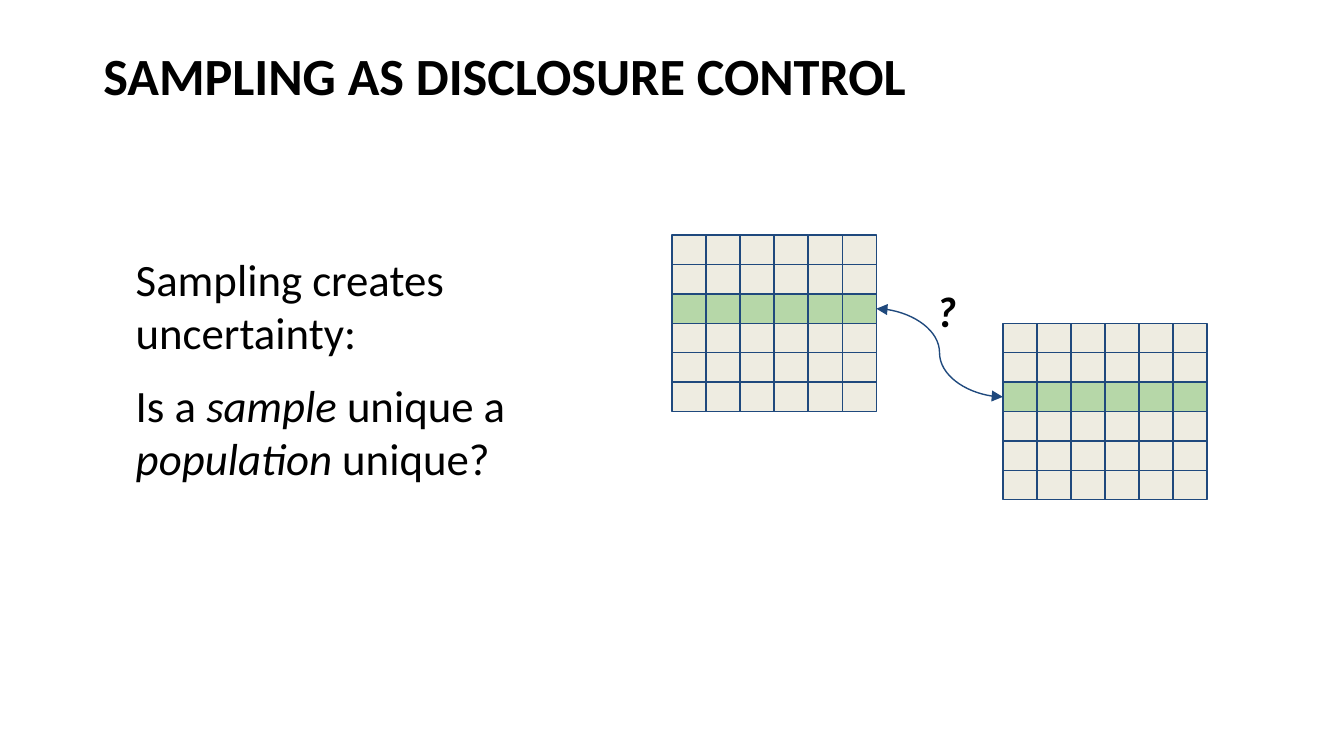
from lxml import etree
from pptx import Presentation
from pptx.dml.color import RGBColor
from pptx.enum.shapes import MSO_CONNECTOR, MSO_SHAPE
from pptx.enum.text import MSO_ANCHOR, MSO_AUTO_SIZE, PP_ALIGN
from pptx.oxml.ns import qn
from pptx.util import Pt

CURVE = MSO_CONNECTOR.CURVE
RECTANGLE = MSO_SHAPE.RECTANGLE
TOP = MSO_ANCHOR.TOP
NO_FIT = MSO_AUTO_SIZE.NONE
LEFT = PP_ALIGN.LEFT

COLORS = {"text": "000000", "line": "1F497D", "cell": "EEECE1", "match": "B6D7A8"}
FONT = "Calibri"
GRID_SIZE = 6
MATCH_ROW = 2
CELL_WIDTH, CELL_HEIGHT = 18.25, 15.75
LEFT_SITE, RIGHT_SITE = 1, 3


def color(name):
    return RGBColor.from_string(COLORS[name])


def set_values(target, values):
    for name, value in values.items():
        setattr(target, name, value)


def place(shape, box):
    left, top, width, height = (Pt(value) for value in box)
    set_values(shape, {"left": left, "top": top, "width": width, "height": height})


def write_text(shape, box, paragraphs, size, inset=7.2, bold=False):
    place(shape, box)
    frame = shape.text_frame
    set_values(frame, {
        "word_wrap": True, "auto_size": NO_FIT, "vertical_anchor": TOP,
        "margin_left": Pt(7.2), "margin_right": Pt(7.2),
        "margin_top": Pt(inset), "margin_bottom": Pt(inset),
    })
    for index, spans in enumerate(paragraphs):
        para = frame.add_paragraph() if index else frame.paragraphs[0]
        properties = para._p.get_or_add_pPr()
        properties.set("marL", "0")
        properties.set("indent", "0")
        etree.SubElement(properties, qn("a:buNone"))
        set_values(para, {
            "alignment": LEFT, "line_spacing": 1.0,
            "space_before": Pt(10 if index else 0),
            "space_after": Pt(10 if index else 0),
        })
        for text, italic in spans:
            span = para.add_run()
            span.text = text
            set_values(span.font, {"name": FONT, "size": Pt(size), "bold": bold, "italic": italic})
            span.font.color.rgb = color("text")


def add_grid(page, left, top):
    rows = []
    for row in range(GRID_SIZE):
        cells = []
        for column in range(GRID_SIZE):
            cell = page.shapes.add_shape(
                RECTANGLE, Pt(left + column * CELL_WIDTH), Pt(top + row * CELL_HEIGHT),
                Pt(CELL_WIDTH), Pt(CELL_HEIGHT))
            cell.shadow.inherit = False
            cell.fill.solid()
            cell.fill.fore_color.rgb = color("match" if row == MATCH_ROW else "cell")
            cell.line.color.rgb = color("line")
            cell.line.width = Pt(0.75)
            cells.append(cell)
        rows.append(cells)
    return rows


def add_link(page, first, second):
    link = page.shapes.add_connector(CURVE, 0, 0, 0, 0)
    link.begin_connect(first, RIGHT_SITE)
    link.end_connect(second, LEFT_SITE)
    link.line.color.rgb = color("line")
    link.line.width = Pt(0.75)
    outline = link.line._get_or_add_ln()
    for end in ("a:headEnd", "a:tailEnd"):
        etree.SubElement(outline, qn(end), type="triangle")
    etree.SubElement(link._element.spPr, qn("a:effectLst"))


def add_diagram(page, box):
    left, top, width, height = box
    grid_width, grid_height = GRID_SIZE * CELL_WIDTH, GRID_SIZE * CELL_HEIGHT
    sample = add_grid(page, left, top)
    population = add_grid(page, left + width - grid_width, top + height - grid_height)
    add_link(page, sample[MATCH_ROW][-1], population[MATCH_ROW][0])
    question = page.shapes.add_textbox(0, 0, 0, 0)
    write_text(question, (left + 134.6, top + 19.4, 51, 42.5), [[("?", True)]], 23, bold=True)


def main():
    deck = Presentation()
    deck.slide_width, deck.slide_height = Pt(720), Pt(405)
    page = deck.slides.add_slide(deck.slide_layouts[1])
    title, body = page.placeholders
    write_text(title, (48.2, 19.4, 603.4, 101.5),
               [[("SAMPLING AS DISCLOSURE CONTROL", False)]], 28, inset=3.6, bold=True)
    write_text(body, (65.5, 127.4, 241.2, 151.2), [
        [("Sampling creates uncertainty:", False)],
        [("Is a ", False), ("sample ", True), ("unique a ", False),
         ("population ", True), ("unique?", False)],
    ], 24)
    add_diagram(page, (360, 126, 286.75, 141.75))
    deck.save("out.pptx")


if __name__ == "__main__":
    main()
